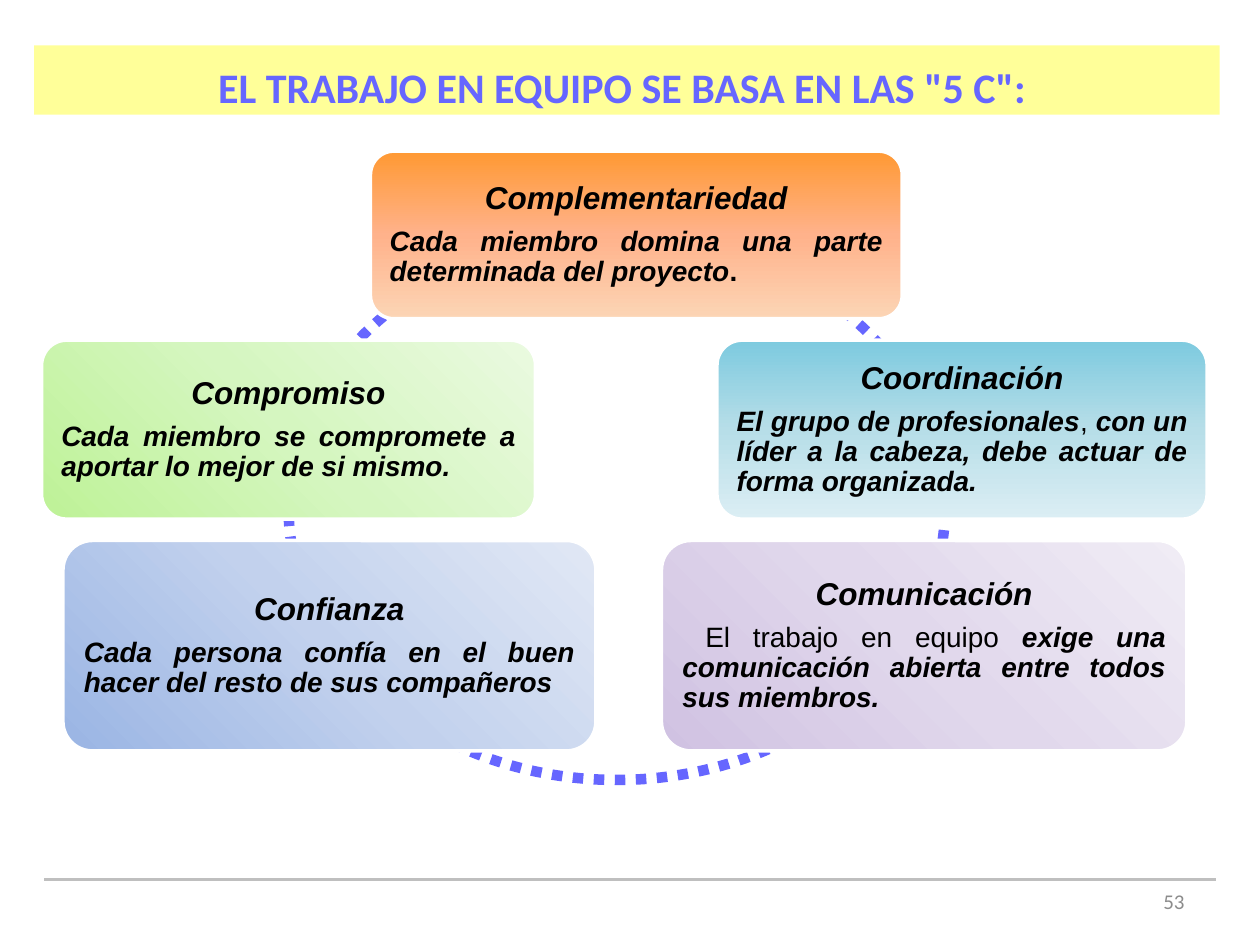
from copy import deepcopy
from dataclasses import dataclass

from pptx import Presentation
from pptx.dml.color import RGBColor as RGB
from pptx.enum.dml import MSO_LINE as Dash
from pptx.enum.shapes import MSO_CONNECTOR as Link, MSO_SHAPE as Kind
from pptx.enum.text import MSO_ANCHOR as Anchor, PP_ALIGN as Align
from pptx.oxml.ns import qn
from pptx.util import Inches, Pt
from lxml.etree import SubElement


@dataclass(frozen=True)
class Theme:
    accent: str = "6666FF"
    band: str = "FFFF99"
    rule: str = "BFBFBF"
    muted: str = "8C8C8C"
    ink: str = "000000"
    white: str = "FFFFFF"
    orange: tuple = ("FF9933", "FFB28B", "FCD5B5")
    teal: tuple = ("7DCADF", "B7DEE8", "DBEEF4")
    purple: tuple = ("D0C2E2", "E1D8EC", "F0ECF5")
    blue: tuple = ("9AB5E4", "C2D1ED", "E1E8F5")
    green: tuple = ("BEF297", "D5F6C0", "EAFAE0")
    title: int = 24
    head: int = 18
    body: int = 16
    small: int = 12
    sans: str = "Calibri"
    card: str = "Arial"


def write(para, text, font, size, color, bold=False, italic=False):
    """Add one formatted run to a paragraph."""
    run = para.add_run()
    run.text = text
    style = run.font
    style.name, style.size = font, Pt(size)
    style.bold, style.italic = bold, italic
    style.color.rgb = RGB.from_string(color)


class Deck:
    def __init__(self, slide, theme):
        self.slide, self.theme = slide, theme

    def shape(self, kind, box):
        item = self.slide.shapes.add_shape(kind, *map(Inches, box))
        item.shadow.inherit = False
        return item

    def line(self, x1, y1, x2, y2):
        ends = map(Inches, (x1, y1, x2, y2))
        item = self.slide.shapes.add_connector(Link.STRAIGHT, *ends)
        item.line.color.rgb = RGB.from_string(self.theme.rule)
        item.line.width = Pt(2)
        SubElement(item._element.spPr, qn("a:effectLst"))

    def ring(self, box):
        item = self.shape(Kind.OVAL, box)
        item.fill.background()
        item.line.color.rgb = RGB.from_string(self.theme.accent)
        item.line.width = Pt(6)
        item.line.dash_style = Dash.ROUND_DOT

    def number(self, text, box):
        frame = self.slide.shapes.add_textbox(*map(Inches, box)).text_frame
        frame.word_wrap = True
        frame.vertical_anchor = Anchor.MIDDLE
        para = frame.paragraphs[0]
        para.alignment = Align.RIGHT
        write(para, text, self.theme.sans, self.theme.small, self.theme.muted)

    def title(self, text, box):
        look = self.theme
        item = self.shape(Kind.RECTANGLE, box)
        item.fill.solid()
        item.fill.fore_color.rgb = RGB.from_string(look.band)
        item.line.fill.background()
        item.text_frame.vertical_anchor = Anchor.TOP
        para = item.text_frame.paragraphs[0]
        para.alignment, para.line_spacing = Align.CENTER, 1.2
        write(para, text, look.sans, look.title, look.accent, bold=True)

    def blend(self, item, colors, angle):
        item.fill.gradient()
        item.fill.gradient_angle = angle
        stops = item._element.spPr.find(".//" + qn("a:gsLst"))
        stops.append(deepcopy(stops[0]))
        for i, (stop, color) in enumerate(zip(item.fill.gradient_stops, colors)):
            stop.position = i / 2
            stop.color.rgb = RGB.from_string(color)

    def card(self, box, colors, angle, head, runs):
        look = self.theme
        item = self.shape(Kind.ROUNDED_RECTANGLE, box)
        item.adjustments[0] = 0.14
        self.blend(item, colors, angle)
        item.line.color.rgb = RGB.from_string(look.white)
        item.line.width = Pt(2)
        frame = item.text_frame
        frame.word_wrap = True
        frame.vertical_anchor = Anchor.MIDDLE
        frame.margin_left = frame.margin_right = Inches(0.1)
        frame.margin_top = frame.margin_bottom = Inches(0.1)
        parts = (
            (frame.paragraphs[0], Align.CENTER, look.head, [(head, True, True)]),
            (frame.add_paragraph(), Align.JUSTIFY, look.body, runs),
        )
        for para, align, size, bits in parts:
            para.alignment, para.line_spacing = align, 0.9
            para.space_after = Pt(0.35 * size)
            for text, bold, italic in bits:
                write(para, text, look.card, size, look.ink, bold=bold, italic=italic)


def main():
    show = Presentation()
    show.slide_width, show.slide_height = Inches(10), Inches(7.5)
    look = Theme()
    deck = Deck(show.slides.add_slide(show.slide_layouts[6]), look)

    # Footer, ring and title
    deck.line(0.35, 6.98, 9.65, 6.98)
    deck.ring((2.29, 1.87, 5.21, 4.32))
    deck.number("53", (7.17, 6.95, 2.33, 0.4))
    deck.title('EL TRABAJO EN EQUIPO SE BASA EN LAS "5 C": ', (0.27, 0.36, 9.41, 0.55))

    # The five cards, clockwise: runs are (text, bold, italic)
    down, rise = 270, 45
    cards = (
        ((2.94, 1.2, 4.22, 1.33), look.orange, down, "Complementariedad",
         [("Cada miembro domina una parte determinada del proyecto", True, True),
          (". ", True, False)]),
        ((5.69, 2.7, 3.89, 1.42), look.teal, down, "Coordinación",
         [("El grupo de profesionales", True, True), (", ", False, False),
          ("con un líder a la cabeza, debe actuar de forma organizada. ", True, True)]),
        ((5.25, 4.29, 4.17, 1.67), look.purple, rise, "Comunicación",
         [(" ", True, False), ("El trabajo en equipo ", False, False),
          ("exige una comunicación abierta entre todos sus miembros. ", True, True)]),
        ((0.5, 4.29, 4.23, 1.67), look.blue, rise, "Confianza",
         [("Cada persona confía en el buen hacer del resto de sus compañeros",
           True, True)]),
        ((0.33, 2.7, 3.92, 1.42), look.green, rise, "Compromiso",
         [("Cada miembro se compromete a aportar lo mejor de si mismo. ", True, True)]),
    )
    for card in cards:
        deck.card(*card)

    show.save("out.pptx")


if __name__ == "__main__":
    main()
